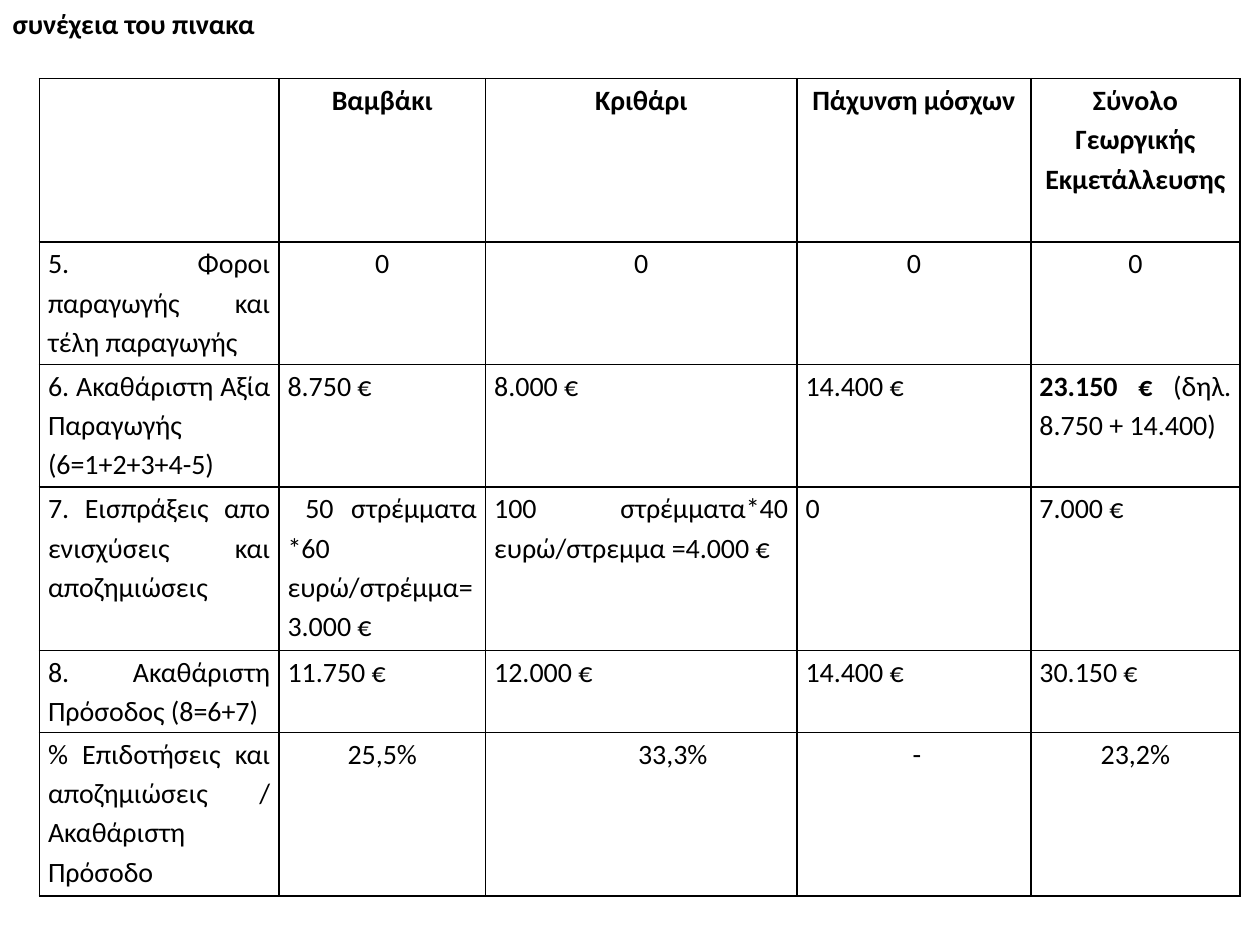
from lxml import etree
from pptx import Presentation
from pptx.dml.color import RGBColor
from pptx.enum.text import MSO_ANCHOR, MSO_AUTO_SIZE, PP_ALIGN
from pptx.oxml.ns import qn
from pptx.util import Pt

LEFT, CENTER, JUSTIFY = PP_ALIGN.LEFT, PP_ALIGN.CENTER, PP_ALIGN.JUSTIFY
MIDDLE = MSO_ANCHOR.MIDDLE
FIT_SHAPE = MSO_AUTO_SIZE.SHAPE_TO_FIT_TEXT
TITLE_ONLY = 5

BLACK = "000000"
FONT = {"name": "Calibri", "size": Pt(16)}
CELL_FORMAT = {"margin_left": Pt(4.95), "margin_right": Pt(4.95),
               "margin_top": Pt(0), "margin_bottom": Pt(0)}
TITLE_BOX = {"left": Pt(0), "top": Pt(0), "width": Pt(155), "height": Pt(26.6)}
TITLE_FRAME = {"word_wrap": False, "auto_size": FIT_SHAPE,
               "vertical_anchor": MIDDLE,
               "margin_left": Pt(7.2), "margin_right": Pt(7.2),
               "margin_top": Pt(3.6), "margin_bottom": Pt(3.6)}

TABLE_LEFT, TABLE_TOP = 22.5, 44.9
COLUMN_WIDTHS = [136.9, 118.1, 177.9, 133.7, 119.5]
ROW_HEIGHTS = [93.4, 70, 70, 93.4, 46.9, 93.4]
CENTERED_ROWS = {0, 1, 5}
FIRST_LINE_INDENTS = {(5, 2): 36}

# A cell is a string, or a list of (text, bold) runs
ROWS = [
    ["", "Βαμβάκι", "Κριθάρι", "Πάχυνση μόσχων",
     "Σύνολο Γεωργικής Εκμετάλλευσης"],
    ["5. Φοροι παραγωγής και τέλη παραγωγής ", "0", "0", "0", "0"],
    ["6. Ακαθάριστη Αξία Παραγωγής (6=1+2+3+4-5)", "8.750 €", "8.000 €",
     "14.400 €", [("23.150 €", True), (" (δηλ. 8.750 + 14.400)", False)]],
    ["7. Εισπράξεις απο ενισχύσεις και αποζημιώσεις ",
     " 50 στρέμματα *60 ευρώ/στρέμμα= 3.000 €",
     "100 στρέμματα*40 ευρώ/στρεμμα =4.000 €", "0", "7.000 €"],
    ["8. Ακαθάριστη Πρόσοδος (8=6+7)", "11.750 €", "12.000 €", "14.400 €",
     "30.150 €"],
    ["% Επιδοτήσεις και αποζημιώσεις / Ακαθάριστη Πρόσοδο", "25,5%", "33,3%",
     " -", "23,2%"],
]


def color(value):
    return RGBColor.from_string(value)


def apply_format(target, values):
    for name, value in values.items():
        setattr(target, name, value)


def add_run(paragraph, text, bold):
    run = paragraph.add_run()
    run.text = text
    apply_format(run.font, {**FONT, "bold": bold})
    run.font.color.rgb = color(BLACK)


def set_borders(cell):
    properties = cell._tc.get_or_add_tcPr()
    for position, side in enumerate(("lnL", "lnR", "lnT", "lnB")):
        line = etree.Element(qn(f"a:{side}"), w=str(Pt(1)))
        fill = etree.SubElement(line, qn("a:solidFill"))
        etree.SubElement(fill, qn("a:srgbClr"), val=BLACK)
        properties.insert(position, line)


def add_title(slide, text):
    title = slide.shapes.title
    apply_format(title, TITLE_BOX)
    apply_format(title.text_frame, TITLE_FRAME)
    paragraph = title.text_frame.paragraphs[0]
    paragraph.alignment = LEFT
    add_run(paragraph, text, True)


def fill_cell(cell, content, row, column):
    apply_format(cell, CELL_FORMAT)
    cell.fill.background()
    set_borders(cell)
    if not content:
        return
    paragraph = cell.text_frame.paragraphs[0]
    centered = row in CENTERED_ROWS and (row == 0 or column > 0)
    apply_format(paragraph, {"alignment": CENTER if centered else JUSTIFY,
                             "line_spacing": 1.15})
    if (row, column) in FIRST_LINE_INDENTS:
        indent = Pt(FIRST_LINE_INDENTS[row, column])
        paragraph._p.get_or_add_pPr().set("indent", str(indent))
    runs = [(content, row == 0)] if isinstance(content, str) else content
    for text, bold in runs:
        add_run(paragraph, text, bold)


def add_table(slide):
    table = slide.shapes.add_table(
        len(ROWS), len(COLUMN_WIDTHS), Pt(TABLE_LEFT), Pt(TABLE_TOP),
        Pt(sum(COLUMN_WIDTHS)), Pt(sum(ROW_HEIGHTS))).table
    apply_format(table, {"first_row": False, "horz_banding": False})
    for column, width in zip(table.columns, COLUMN_WIDTHS):
        column.width = Pt(width)
    for row, height in zip(table.rows, ROW_HEIGHTS):
        row.height = Pt(height)
    for row, contents in enumerate(ROWS):
        for column, content in enumerate(contents):
            fill_cell(table.cell(row, column), content, row, column)


def main():
    presentation = Presentation()
    apply_format(presentation, {"slide_width": Pt(720),
                                "slide_height": Pt(540)})
    slide = presentation.slides.add_slide(
        presentation.slide_layouts[TITLE_ONLY])
    # Heading above the table
    add_title(slide, "συνέχεια του πινακα")
    # Income by crop and livestock
    add_table(slide)
    presentation.save("out.pptx")


if __name__ == "__main__":
    main()
